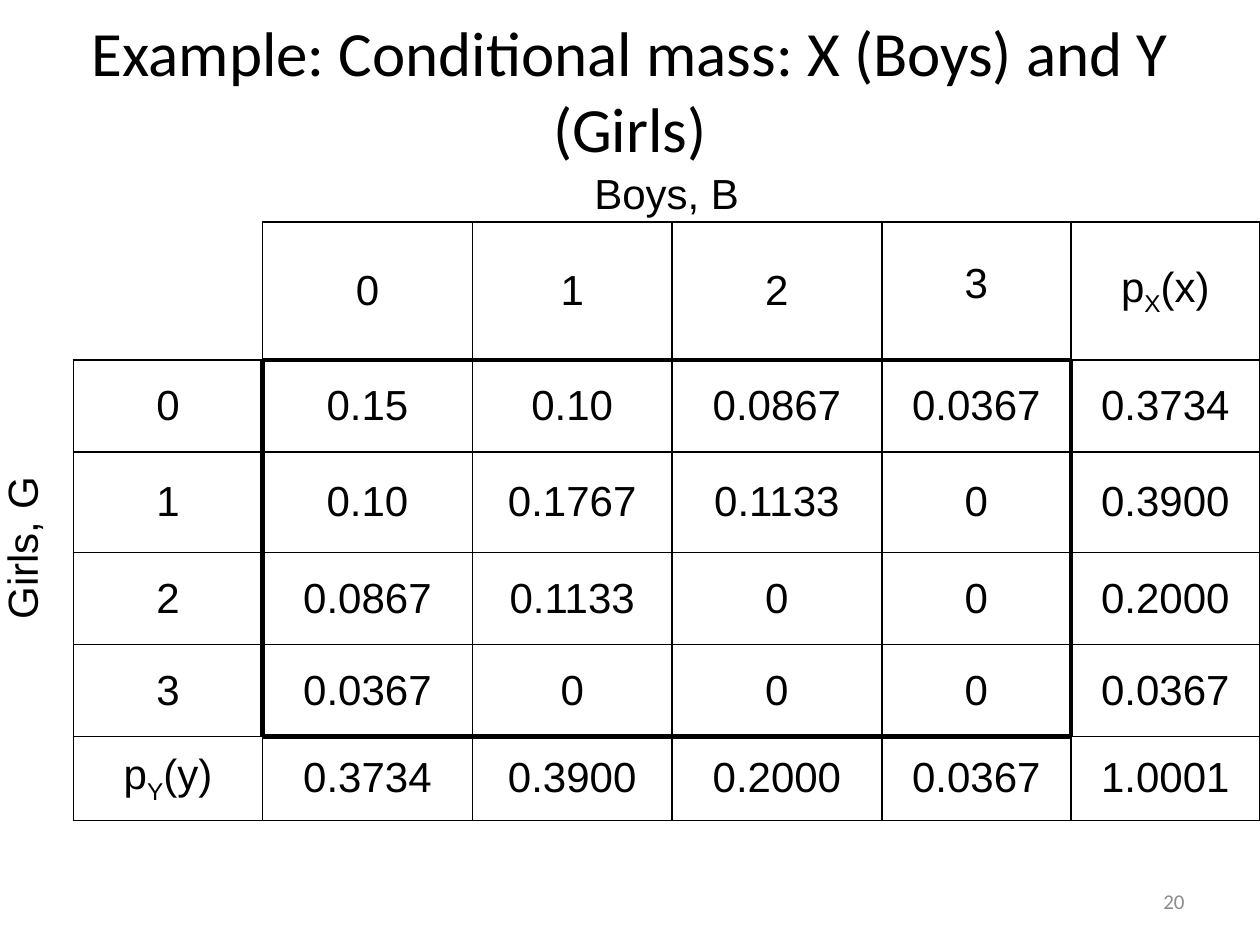
from dataclasses import dataclass

from lxml import etree
from pptx import Presentation
from pptx.dml.color import RGBColor
from pptx.enum.text import MSO_ANCHOR, PP_ALIGN
from pptx.oxml.ns import qn
from pptx.util import Pt

MIDDLE, TOP, BOTTOM = MSO_ANCHOR.MIDDLE, MSO_ANCHOR.TOP, MSO_ANCHOR.BOTTOM
CENTER, RIGHT = PP_ALIGN.CENTER, PP_ALIGN.RIGHT


@dataclass(frozen=True)
class Theme:
    black: str = "000000"
    gray: str = "8C8C8C"
    heading_font: str = "Calibri"
    table_font: str = "Arial"
    title_size: int = 36
    table_size: int = 24
    number_size: int = 12
    thin: int = 1
    thick: int = 3


THEME = Theme()

COLUMN_WIDTHS = [42, 108, 120, 114, 120, 108, 108]
ROW_HEIGHTS = [26, 79, 52.5, 57.5, 52.5, 52.5, 48]
JOINT_CELLS = range(2, 6)

# A tuple holds base text, subscript and closing text.
CELL_TEXTS = [
    ["", "", "Boys, B", "", "", "", ""],
    ["", "", "0", "1", "2", "3", ("p", "X", "(x)")],
    ["Girls, G", "0", "0.15", "0.10", "0.0867", "0.0367", "0.3734"],
    ["", "1", "0.10", "0.1767", "0.1133", "0", "0.3900"],
    ["", "2", "0.0867", "0.1133", "0", "0", "0.2000"],
    ["", "3", "0.0367", "0", "0", "0", "0.0367"],
    ["", ("p", "Y", "(y)"), "0.3734", "0.3900", "0.2000", "0.0367", "1.0001"],
]


def style_paragraph(paragraph, font_name, size, color, alignment):
    paragraph.alignment = alignment
    paragraph.font.name = font_name
    paragraph.font.size = Pt(size)
    paragraph.font.color.rgb = RGBColor.from_string(color)


def add_text(slide, text, left, top, width, height, size, color, alignment):
    shape = slide.shapes.add_textbox(Pt(left), Pt(top), Pt(width), Pt(height))
    frame = shape.text_frame
    frame.word_wrap = True
    frame.vertical_anchor = MIDDLE
    paragraph = frame.paragraphs[0]
    paragraph.text = text
    style_paragraph(paragraph, THEME.heading_font, size, color, alignment)


def is_ruled(row, column):
    """Tell whether a cell belongs to the visible grid."""
    return 1 <= row <= 6 and 1 <= column <= 6 and (row, column) != (1, 1)


def is_joint(row, column):
    """Tell whether a cell holds a joint probability."""
    return row in JOINT_CELLS and column in JOINT_CELLS


def border_width(cell, neighbor):
    if is_joint(*cell) != is_joint(*neighbor):
        return THEME.thick
    return THEME.thin if is_ruled(*cell) or is_ruled(*neighbor) else 0


def set_borders(cell, row, column):
    neighbors = {
        "a:lnL": (row, column - 1),
        "a:lnR": (row, column + 1),
        "a:lnT": (row - 1, column),
        "a:lnB": (row + 1, column),
    }
    properties = cell._tc.get_or_add_tcPr()
    for tag, neighbor in neighbors.items():
        width = border_width((row, column), neighbor)
        line = etree.SubElement(properties, qn(tag), w=str(Pt(width)))
        if width:
            fill = etree.SubElement(line, qn("a:solidFill"))
            etree.SubElement(fill, qn("a:srgbClr"), val=THEME.black)
        else:
            etree.SubElement(line, qn("a:noFill"))


def fill_cell(cell, content):
    cell.margin_left = cell.margin_right = Pt(5)
    cell.margin_top = cell.margin_bottom = 0
    cell.vertical_anchor = MIDDLE
    paragraph = cell.text_frame.paragraphs[0]
    if isinstance(content, tuple):
        runs = [paragraph.add_run() for part in content]
        for run, part in zip(runs, content):
            run.text = part
        runs[1]._r.get_or_add_rPr().set("baseline", "-25000")
    elif content:
        paragraph.text = content
    style_paragraph(paragraph, THEME.table_font, THEME.table_size,
                    THEME.black, CENTER)


def add_mass_table(slide):
    frame = slide.shapes.add_table(
        len(ROW_HEIGHTS), len(COLUMN_WIDTHS), 0, Pt(98),
        Pt(sum(COLUMN_WIDTHS)), Pt(sum(ROW_HEIGHTS)))
    table = frame.table
    table.first_row = table.horz_banding = False
    for column, width in zip(table.columns, COLUMN_WIDTHS):
        column.width = Pt(width)
    for row, height in zip(table.rows, ROW_HEIGHTS):
        row.height = Pt(height)
    for row, contents in enumerate(CELL_TEXTS):
        for column, content in enumerate(contents):
            cell = table.cell(row, column)
            fill_cell(cell, content)
            set_borders(cell, row, column)
            cell.fill.background()

    boys = table.cell(0, 2)
    boys.merge(table.cell(0, 5))
    boys.vertical_anchor = TOP
    girls = table.cell(2, 0)
    girls.merge(table.cell(5, 0))
    girls._tc.get_or_add_tcPr().set("vert", "vert270")
    last_count = table.cell(1, 5)
    last_count.vertical_anchor = BOTTOM
    last_count.margin_bottom = Pt(30)


def main():
    presentation = Presentation()
    presentation.slide_width, presentation.slide_height = Pt(720), Pt(540)
    slide = presentation.slides.add_slide(presentation.slide_layouts[6])
    add_text(slide, "Example: Conditional mass: X (Boys) and Y (Girls)",
             0, 0, 720, 102, THEME.title_size, THEME.black, CENTER)
    add_mass_table(slide)
    add_text(slide, "20", 516, 500.5, 168, 28.75,
             THEME.number_size, THEME.gray, RIGHT)
    presentation.save("out.pptx")


if __name__ == "__main__":
    main()
